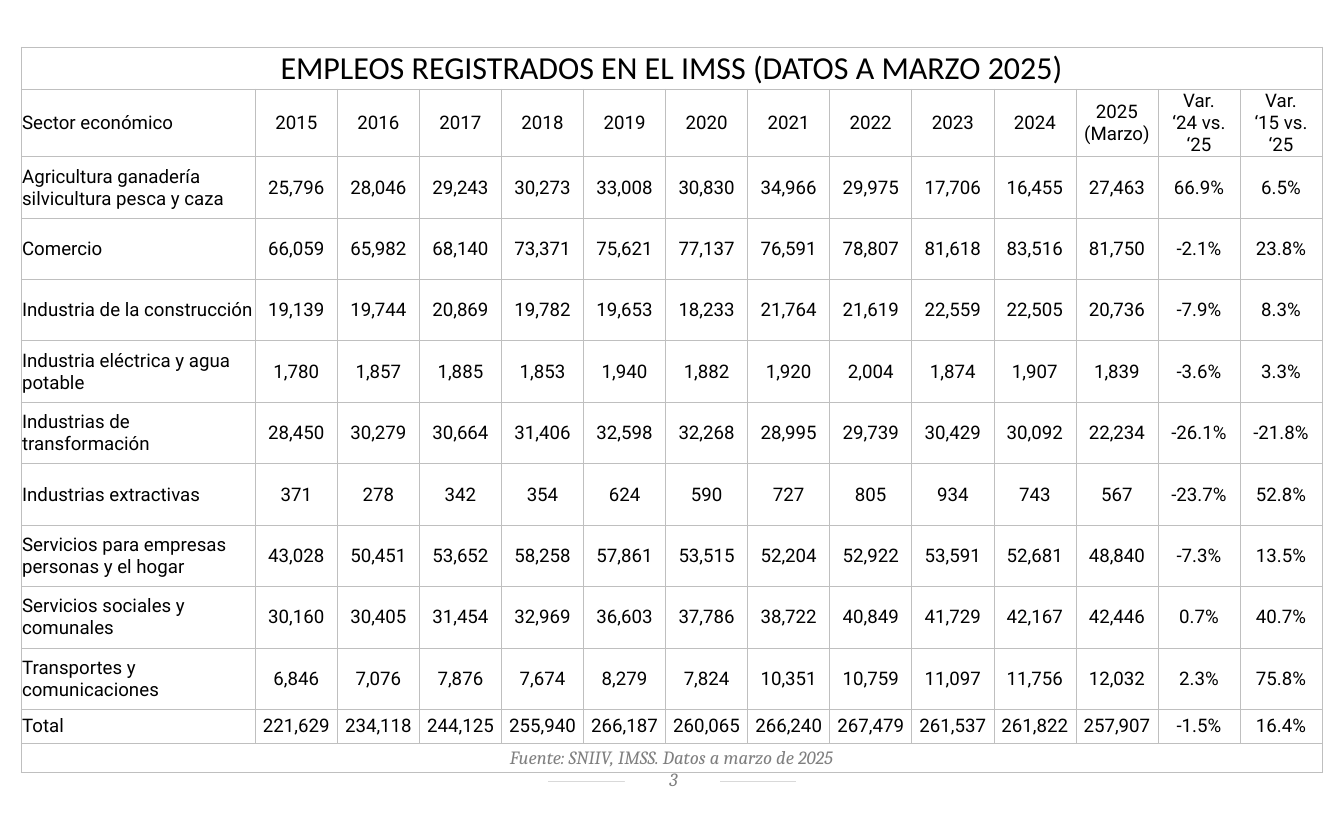
from copy import deepcopy
from dataclasses import dataclass

from lxml import etree
from pptx import Presentation
from pptx import util as u
from pptx.dml.color import RGBColor
from pptx.enum import shapes, text
from pptx.oxml import ns

BLACK = RGBColor(0x00, 0x00, 0x00)
WHITE = RGBColor(0xFF, 0xFF, 0xFF)
SOURCE_GRAY = RGBColor(0x7F, 0x7F, 0x7F)
NUMBER_GRAY = RGBColor(0x80, 0x80, 0x80)
RULE_GRAY = RGBColor(0xD9, 0xD9, 0xD9)
BORDER_GRAY = RGBColor(0xBF, 0xBF, 0xBF)

SECTOR_WIDTH, FIGURE_WIDTH = 2.44, 0.855
TITLE_HEIGHT, SECTOR_HEIGHT, TOTAL_HEIGHT, SOURCE_HEIGHT = 0.44, 0.64, 0.35, 0.31

TITLE = "EMPLEOS REGISTRADOS EN EL IMSS (DATOS A MARZO 2025)"
SOURCE = "Fuente: SNIIV, IMSS. Datos a marzo de 2025"
HEADINGS = ["Sector económico", *map(str, range(2015, 2025)), "2025 (Marzo)",
            "Var.\n‘24 vs. ‘25", "Var.\n‘15 vs. ‘25"]


@dataclass
class Sector:
    label: str
    figures: str


SECTORS = [
    Sector("Agricultura ganadería silvicultura pesca y caza",
           "25,796 28,046 29,243 30,273 33,008 30,830 34,966 29,975 17,706 16,455 27,463 66.9% 6.5%"),
    Sector("Comercio",
           "66,059 65,982 68,140 73,371 75,621 77,137 76,591 78,807 81,618 83,516 81,750 -2.1% 23.8%"),
    Sector("Industria de la construcción",
           "19,139 19,744 20,869 19,782 19,653 18,233 21,764 21,619 22,559 22,505 20,736 -7.9% 8.3%"),
    Sector("Industria eléctrica y agua potable",
           "1,780 1,857 1,885 1,853 1,940 1,882 1,920 2,004 1,874 1,907 1,839 -3.6% 3.3%"),
    Sector("Industrias de transformación",
           "28,450 30,279 30,664 31,406 32,598 32,268 28,995 29,739 30,429 30,092 22,234 -26.1% -21.8%"),
    Sector("Industrias extractivas",
           "371 278 342 354 624 590 727 805 934 743 567 -23.7% 52.8%"),
    Sector("Servicios para empresas personas y el hogar",
           "43,028 50,451 53,652 58,258 57,861 53,515 52,204 52,922 53,591 52,681 48,840 -7.3% 13.5%"),
    Sector("Servicios sociales y comunales",
           "30,160 30,405 31,454 32,969 36,603 37,786 38,722 40,849 41,729 42,167 42,446 0.7% 40.7%"),
    Sector("Transportes y comunicaciones",
           "6,846 7,076 7,876 7,674 8,279 7,824 10,351 10,759 11,097 11,756 12,032 2.3% 75.8%"),
    Sector("Total",
           "221,629 234,118 244,125 255,940 266,187 260,065 266,240 267,479 261,537 261,822 257,907 -1.5% 16.4%"),
]


def write(frame, words: str, *, size: float = 14, font: str = "Roboto",
          color: RGBColor = BLACK, italic: bool = False,
          align=text.PP_ALIGN.CENTER) -> None:
    paragraph = frame.paragraphs[0]
    paragraph.text = words
    paragraph.alignment = align
    for run in paragraph.runs:
        run.font.size = u.Pt(size)
        run.font.name = font
        run.font.color.rgb = color
        run.font.italic = italic
    for line_break in paragraph._p.findall(ns.qn("a:br")):
        line_break.append(deepcopy(paragraph.runs[0]._r.rPr))


def set_margins(holder, left: float, top: float, right: float, bottom: float) -> None:
    holder.margin_left, holder.margin_top = u.Inches(left), u.Inches(top)
    holder.margin_right, holder.margin_bottom = u.Inches(right), u.Inches(bottom)


def style_cell(cell) -> None:
    set_margins(cell, 0.01, 0.01, 0.01, 0)
    cell.vertical_anchor = text.MSO_ANCHOR.MIDDLE
    properties = cell._tc.get_or_add_tcPr()
    for side in ("a:lnL", "a:lnR", "a:lnT", "a:lnB"):
        border = etree.SubElement(properties, ns.qn(side), w=str(u.Pt(0.5)))
        fill = etree.SubElement(border, ns.qn("a:solidFill"))
        etree.SubElement(fill, ns.qn("a:srgbClr"), val=str(BORDER_GRAY))
    cell.fill.background()


def add_page_number(slide) -> None:
    rule = slide.shapes.add_connector(
        shapes.MSO_CONNECTOR.STRAIGHT,
        u.Inches(5.71), u.Inches(8.14), u.Inches(8.29), u.Inches(8.14))
    rule.line.color.rgb = RULE_GRAY
    rule.line.width = u.Pt(0.75)
    etree.SubElement(rule._element.spPr, ns.qn("a:effectLst"))

    number = slide.shapes.add_shape(
        shapes.MSO_SHAPE.RECTANGLE,
        u.Inches(6.51), u.Inches(7.98), u.Inches(0.99), u.Inches(0.29))
    number.shadow.inherit = False
    number.fill.solid()
    number.fill.fore_color.rgb = WHITE
    number.line.fill.background()
    frame = number.text_frame
    frame.word_wrap = True
    frame.vertical_anchor = text.MSO_ANCHOR.MIDDLE
    set_margins(frame, 0.12, 0.02, 0.1, 0.05)
    write(frame, "3", font="Cambria", color=NUMBER_GRAY, italic=True)


def add_jobs_table(slide) -> None:
    body = [HEADINGS] + [[sector.label, *sector.figures.split()] for sector in SECTORS]
    widths = [SECTOR_WIDTH] + [FIGURE_WIDTH] * (len(HEADINGS) - 1)
    heights = [TITLE_HEIGHT] + [SECTOR_HEIGHT] * len(SECTORS) + [TOTAL_HEIGHT, SOURCE_HEIGHT]
    jobs = slide.shapes.add_table(
        len(heights), len(widths), u.Inches(0.22), u.Inches(0.49),
        u.Inches(sum(widths)), u.Inches(sum(heights))).table
    jobs.first_row = False
    jobs.horz_banding = False
    for column, width in zip(jobs.columns, widths):
        column.width = u.Inches(width)
    for row, height in zip(jobs.rows, heights):
        row.height = u.Inches(height)
    for cell in jobs.iter_cells():
        style_cell(cell)

    last_row, last_column = len(heights) - 1, len(widths) - 1
    for row in (0, last_row):
        jobs.cell(row, 0).merge(jobs.cell(row, last_column))
    write(jobs.cell(0, 0).text_frame, TITLE, size=24, font="Calibri")
    write(jobs.cell(last_row, 0).text_frame, SOURCE, font="Cambria",
          color=SOURCE_GRAY, italic=True)
    for row, entries in enumerate(body, start=1):
        for column, entry in enumerate(entries):
            align = text.PP_ALIGN.CENTER if column else text.PP_ALIGN.LEFT
            write(jobs.cell(row, column).text_frame, entry, align=align)


def main() -> None:
    deck = Presentation()
    deck.slide_width, deck.slide_height = u.Inches(14), u.Inches(8.5)
    slide = deck.slides.add_slide(deck.slide_layouts[6])
    add_page_number(slide)
    add_jobs_table(slide)
    deck.save("out.pptx")


if __name__ == "__main__":
    main()
